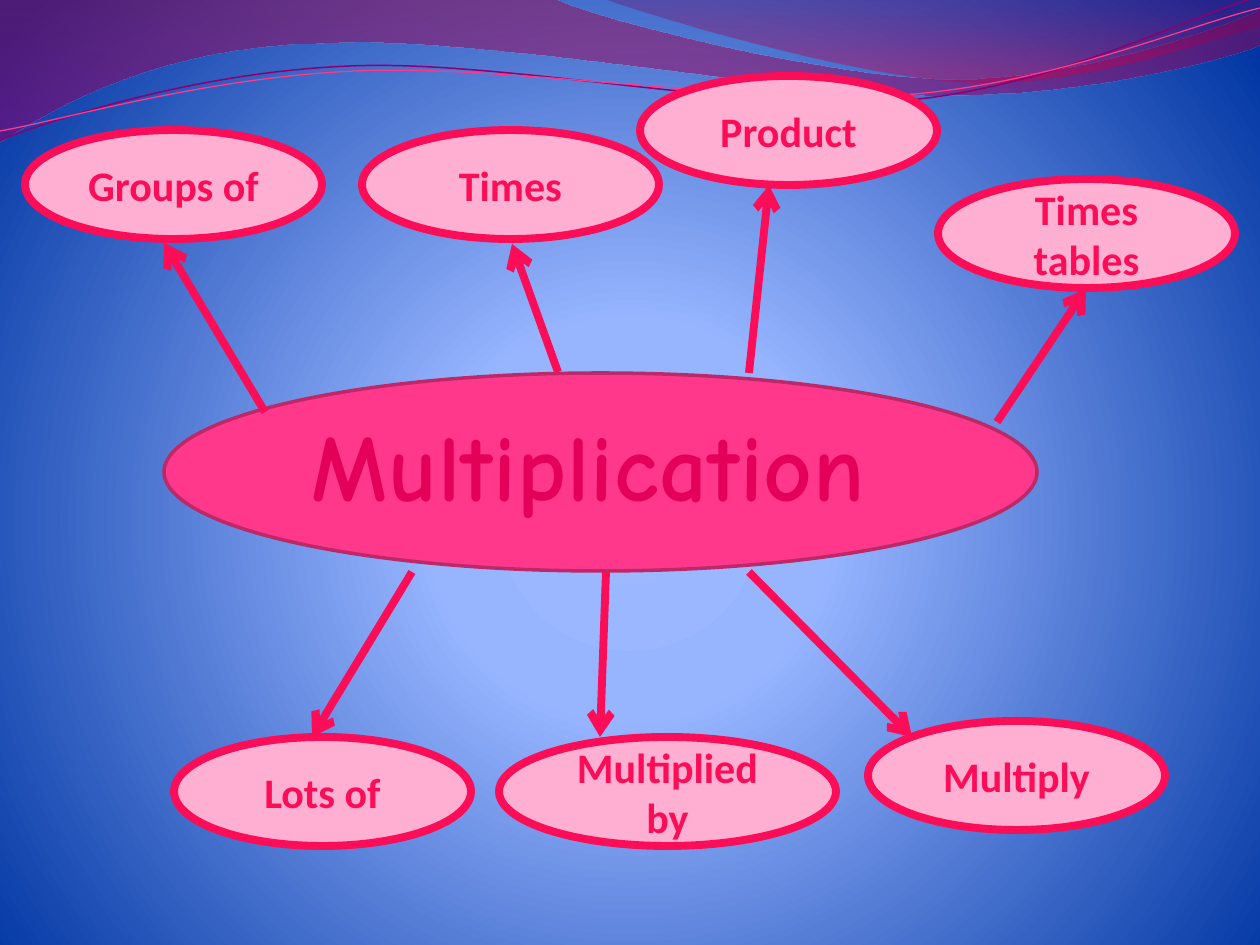
from dataclasses import dataclass
from typing import Any, NamedTuple

import pptx
import pptx.dml.color
import pptx.enum.shapes
import pptx.enum.text
import pptx.oxml
import pptx.oxml.ns
import pptx.util

EMU_PER_PX = 914400 / 126


class Stop(NamedTuple):
    percent: int
    color: str
    opacity: int = 100


@dataclass(frozen=True)
class Theme:
    hub: str = "FF388C"
    hub_edge: str = "BD2968"
    bubble: str = "FFAFD1"
    accent: str = "FB0D57"
    dark_strand: str = "8A0070"
    sky: tuple = (Stop(0, "9DB8FF"), Stop(25, "97B5FF"), Stop(100, "0035A2"))
    wide_wave: tuple = (Stop(0, "A90042", 45), Stop(100, "8E0073", 55))
    corner_wave: tuple = (Stop(0, "73005E", 30), Stop(80, "C9004F", 45))
    title: tuple = (Stop(25, "E40059"), Stop(100, "A1003F"))
    label_font: str = "Calibri"
    title_font: str = "Comic Neue"
    label_size: int = 24
    title_size: int = 54
    bold_line: float = 4.5
    hub_line: float = 2


THEME = Theme()


class Bubble(NamedTuple):
    text: str
    left: int
    top: int
    width: int = 297
    height: int = 109


class Arrow(NamedTuple):
    x1: int
    y1: int
    x2: int
    y2: int


class Wave(NamedTuple):
    """Start point, then segments: 2 numbers for a line, 6 for a Bezier curve."""
    start: tuple
    segments: tuple
    stops: tuple = ()
    line_color: str = ""
    line_width: float = 0


WAVES = (
    Wave((0, 0), ((554, -1), (600, 21, 837, 79, 955, 79), (1075, 79, 1207, 33, 1260, 11),
                  (1261, 45), (1239, 55, 1096, 96, 940, 95), (784, 95, 481, 35, 324, 43),
                  (163, 45, 58, 105, -1, 142), (0, 0)), THEME.wide_wave),
    Wave((604, -1), ((641, 14, 859, 78, 969, 82), (1079, 87, 1211, 40, 1260, 26),
                     (1260, 0), (604, -1)), THEME.corner_wave),
    Wave((0, 140), ((60, 117, 199, 72, 349, 66), (498, 59, 747, 112, 898, 101),
                    (1050, 89, 1182, 19, 1257, -3)), (), THEME.dark_strand, 0.85),
    Wave((0, 131), ((59, 121, 207, 77, 357, 71), (508, 64, 752, 106, 903, 95),
                    (1053, 84, 1186, 26, 1260, 8)), (), THEME.hub, 0.75),
)

BUBBLES = (
    Bubble("Groups of", 25, 130),
    Bubble("Multiply", 868, 721),
    Bubble("Product", 640, 76),
    Bubble("Lots of", 174, 737),
    Bubble("Times tables", 938, 179),
    Bubble("Multiplied by", 499, 737, 337),
    Bubble("Times", 362, 130),
)

ARROWS = (
    Arrow(265, 412, 164, 243),
    Arrow(749, 572, 912, 737),
    Arrow(749, 373, 769, 185),
    Arrow(412, 572, 312, 737),
    Arrow(606, 572, 600, 737),
    Arrow(997, 422, 1086, 289),
    Arrow(558, 372, 512, 244),
)


def px(value: float) -> pptx.util.Emu:
    return pptx.util.Emu(round(value * EMU_PER_PX))


def rgb(color: str) -> pptx.dml.color.RGBColor:
    return pptx.dml.color.RGBColor.from_string(color)


def set_gradient(fill: Any, owner: Any, stops: tuple, direction: str) -> None:
    """Give the fill of an XML owner these stops and this direction element."""
    fill.gradient()
    gradient = owner.find(".//" + pptx.oxml.ns.qn("a:gradFill"))
    for child in list(gradient):
        gradient.remove(child)
    stop_xml = "".join(
        f'<a:gs pos="{s.percent * 1000}"><a:srgbClr val="{s.color}">'
        f'<a:alpha val="{s.opacity * 1000}"/></a:srgbClr></a:gs>' for s in stops)
    source = pptx.oxml.parse_xml(
        f'<a:gradFill {pptx.oxml.ns.nsdecls("a")}><a:gsLst>{stop_xml}</a:gsLst>'
        f'{direction}</a:gradFill>')
    gradient.extend(list(source))


DOWNWARD = '<a:lin ang="5400000" scaled="0"/>'
RADIAL = ('<a:path path="circle"><a:fillToRect l="10000" t="110000" '
          'r="10000" b="100000"/></a:path>')


def bend(outline: Any, segments: tuple) -> None:
    """Merge the three straight steps of each Bezier segment into one curve."""
    steps = iter(list(outline.iter(pptx.oxml.ns.qn("a:lnTo"))))
    for segment in segments:
        group = [next(steps) for _ in range(len(segment) // 2)]
        if len(group) == 3:
            curve = pptx.oxml.parse_xml(
                f'<a:cubicBezTo {pptx.oxml.ns.nsdecls("a")}/>')
            group[0].addprevious(curve)
            for step in group:
                curve.append(step[0])
                step.getparent().remove(step)


def draw_wave(shapes: Any, wave: Wave) -> None:
    points = [(px(s[i]), px(s[i + 1])) for s in wave.segments for i in range(0, len(s), 2)]
    builder = shapes.build_freeform(*map(px, wave.start))
    builder.add_line_segments(points, close=bool(wave.stops))
    ribbon = builder.convert_to_shape()
    bend(ribbon._element, wave.segments)
    ribbon.shadow.inherit = False
    if wave.stops:
        set_gradient(ribbon.fill, ribbon._element, wave.stops, DOWNWARD)
        ribbon.line.fill.background()
    else:
        ribbon.fill.background()
        ribbon.line.color.rgb = rgb(wave.line_color)
        ribbon.line.width = pptx.util.Pt(wave.line_width)


def draw_ellipse(shapes: Any, box: tuple, fill: str, edge: str, width: float) -> Any:
    ellipse = shapes.add_shape(pptx.enum.shapes.MSO_SHAPE.OVAL, *map(px, box))
    ellipse.shadow.inherit = False
    ellipse.fill.solid()
    ellipse.fill.fore_color.rgb = rgb(fill)
    ellipse.line.color.rgb = rgb(edge)
    ellipse.line.width = pptx.util.Pt(width)
    return ellipse


def write(frame: Any, text: str, font_name: str, size: int) -> Any:
    paragraph = frame.paragraphs[0]
    paragraph.text = text
    paragraph.alignment = pptx.enum.text.PP_ALIGN.CENTER
    paragraph.font.name = font_name
    paragraph.font.size = pptx.util.Pt(size)
    paragraph.font.bold = True
    return paragraph


def draw_bubble(shapes: Any, bubble: Bubble) -> None:
    ellipse = draw_ellipse(shapes, bubble[1:], THEME.bubble, THEME.accent, THEME.bold_line)
    ellipse.text_frame.vertical_anchor = pptx.enum.text.MSO_ANCHOR.MIDDLE
    label = write(ellipse.text_frame, bubble.text, THEME.label_font, THEME.label_size)
    label.font.color.rgb = rgb(THEME.accent)


def draw_arrow(shapes: Any, arrow: Arrow) -> None:
    connector = shapes.add_connector(
        pptx.enum.shapes.MSO_CONNECTOR.STRAIGHT, *map(px, arrow))
    connector.line.color.rgb = rgb(THEME.accent)
    connector.line.width = pptx.util.Pt(THEME.bold_line)
    namespace = pptx.oxml.ns.nsdecls("a")
    connector.line._get_or_add_ln().append(
        pptx.oxml.parse_xml(f'<a:tailEnd {namespace} type="arrow"/>'))
    connector._element.spPr.append(pptx.oxml.parse_xml(f"<a:effectLst {namespace}/>"))


def draw_title(shapes: Any, text: str) -> None:
    box = shapes.add_textbox(*map(px, (265, 401, 648, 127)))
    box.text_frame.word_wrap = False
    box.text_frame.auto_size = pptx.enum.text.MSO_AUTO_SIZE.SHAPE_TO_FIT_TEXT
    title = write(box.text_frame, text, THEME.title_font, THEME.title_size)
    set_gradient(title.font.fill, title._p, THEME.title, DOWNWARD)
    title.font._element.set("spc", "50")


def main() -> None:
    deck = pptx.Presentation()
    deck.slide_width, deck.slide_height = px(1260), px(945)
    slide = deck.slides.add_slide(deck.slide_layouts[6])
    set_gradient(slide.background.fill, slide._element, THEME.sky, RADIAL)
    # Decorative waves along the top
    for wave in WAVES:
        draw_wave(slide.shapes, wave)
    # Central topic with its synonyms around it
    draw_ellipse(slide.shapes, (164, 373, 873, 198), THEME.hub, THEME.hub_edge, THEME.hub_line)
    for bubble in BUBBLES:
        draw_bubble(slide.shapes, bubble)
    for arrow in ARROWS:
        draw_arrow(slide.shapes, arrow)
    draw_title(slide.shapes, "Multiplication")
    deck.save("out.pptx")


if __name__ == "__main__":
    main()
